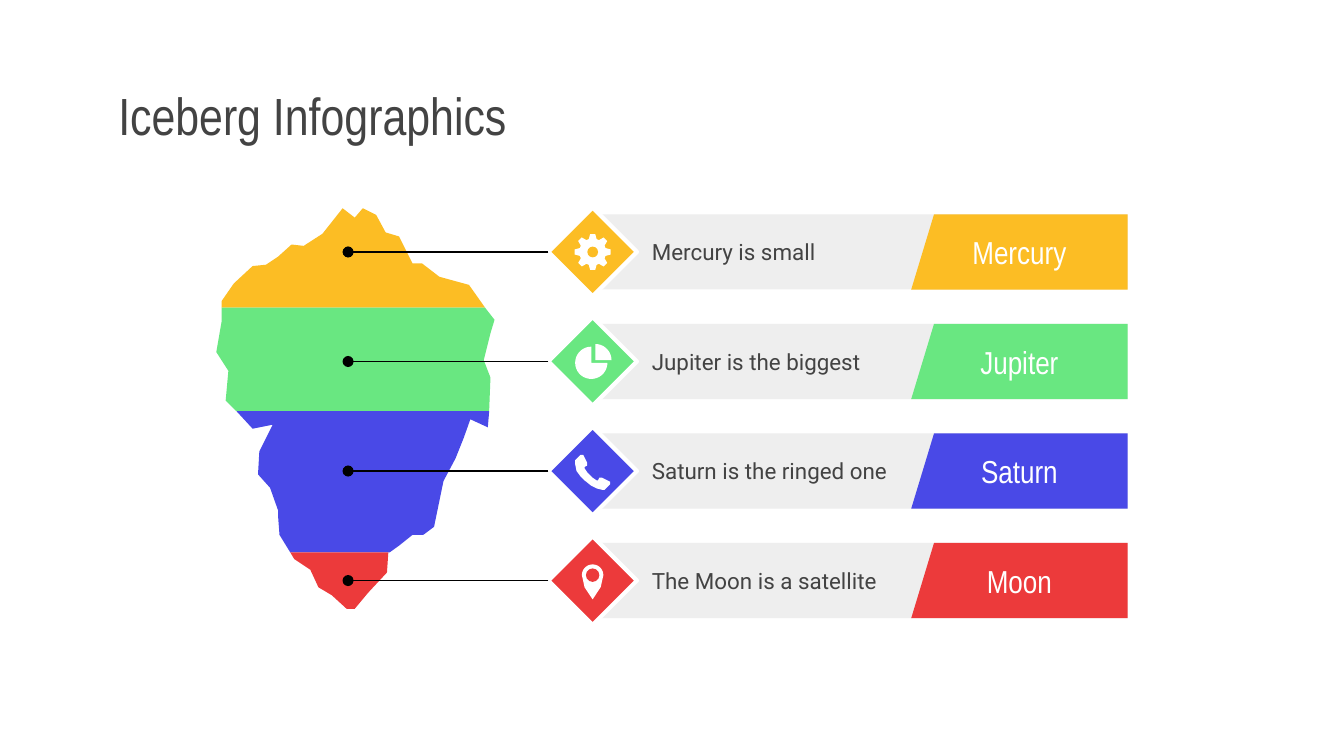
from math import cos, radians, sin

from lxml import etree
from pptx import Presentation
from pptx.dml.color import RGBColor
from pptx.enum.shapes import MSO_CONNECTOR, MSO_SHAPE
from pptx.enum.text import MSO_ANCHOR, MSO_AUTO_SIZE, PP_ALIGN
from pptx.oxml.ns import qn
from pptx.util import Inches, Pt

RECTANGLE, DIAMOND, OVAL = MSO_SHAPE.RECTANGLE, MSO_SHAPE.DIAMOND, MSO_SHAPE.OVAL
STRAIGHT = MSO_CONNECTOR.STRAIGHT
LEFT, CENTER, MIDDLE = PP_ALIGN.LEFT, PP_ALIGN.CENTER, MSO_ANCHOR.MIDDLE
NO_AUTOFIT = MSO_AUTO_SIZE.NONE

COLORS = {"yellow": "FCBD24", "green": "69E781", "blue": "4949E7", "red": "EC3A3B",
          "bar": "EEEEEE", "text": "434343", "white": "FFFFFF", "black": "000000"}

# Content: one row per iceberg layer, top to bottom
TITLE = "Iceberg Infographics"
ROWS = [("Mercury", "Mercury is small", "yellow", "gear"),
        ("Jupiter", "Jupiter is the biggest", "green", "pie"),
        ("Saturn", "Saturn is the ringed one", "blue", "phone"),
        ("Moon", "The Moon is a satellite", "red", "pin")]

# Iceberg outline by layer, in inches on the slide
LAYERS = [
    [(2.55, 1.55), (2.4, 1.74), (2.26, 1.83), (2.17, 1.82), (2.07, 1.91), (1.98, 1.97),
     (1.88, 1.98), (1.74, 2.11), (1.65, 2.24), (1.65, 2.29), (3.61, 2.29), (3.49, 2.12),
     (3.27, 2.06), (3.14, 1.96), (3.07, 1.96), (2.97, 1.76), (2.87, 1.73), (2.8, 1.6),
     (2.7, 1.55), (2.64, 1.62)],
    [(1.65, 2.29), (1.65, 2.39), (1.61, 2.62), (1.7, 2.76), (1.68, 2.98), (1.76, 3.06),
     (3.64, 3.06), (3.65, 2.81), (3.6, 2.68), (3.65, 2.48), (3.68, 2.38), (3.61, 2.29)],
    [(1.76, 3.06), (1.88, 3.19), (2.03, 3.16), (1.93, 3.36), (1.92, 3.53), (2.01, 3.63),
     (2.07, 3.8), (2.07, 3.85), (2.08, 3.98), (2.16, 4.11), (2.9, 4.11), (2.97, 4.06),
     (3.07, 3.98), (3.15, 3.98), (3.23, 3.92), (3.3, 3.58), (3.39, 3.41), (3.45, 3.26),
     (3.5, 3.12), (3.63, 3.18), (3.64, 3.06)],
    [(2.16, 4.11), (2.19, 4.16), (2.31, 4.24), (2.37, 4.37), (2.47, 4.43), (2.58, 4.53),
     (2.64, 4.53), (2.74, 4.41), (2.88, 4.26), (2.89, 4.11)]]

# Row geometry
PITCH = 1.63 / 2
LAST_Y = 4.32
FIRST_Y = LAST_Y - PITCH * (len(ROWS) - 1)
ICON_X, DOT_X, DIAMOND_SIZE = 4.41, 2.59, 0.66
BAR_LEFT, BAR_RIGHT, BAR_HEIGHT = 4.4, 8.39, 0.56
LABEL_LEFT, LABEL_SLANT = 6.78, 0.17


def arc(x, y, radius, start, end, step=10):
    return [(x + radius * cos(radians(a)), y + radius * sin(radians(a)))
            for a in range(start, end + 1, step)]


# Icon outlines, and round holes as (y, radius), around the diamond's centre
GEAR_TOOTH = [(-17, 0.1), (-8, 0.135), (8, 0.135), (17, 0.1)]
ICONS = {
    "gear": [[(radius * cos(radians(45 * tooth + turn)), radius * sin(radians(45 * tooth + turn)))
              for tooth in range(8) for turn, radius in GEAR_TOOTH]],
    "pie": [arc(-0.01, 0.01, 0.12, 0, 270) + [(-0.01, 0.01)],
            arc(0.02, -0.01, 0.12, -90, 0) + [(0.02, -0.01)]],
    "phone": [[(-0.08, -0.12), (-0.09, -0.12), (-0.13, -0.08), (-0.13, -0.05), (-0.12, 0),
               (-0.09, 0.04), (-0.06, 0.07), (-0.01, 0.11), (0.03, 0.13), (0.07, 0.14),
               (0.09, 0.14), (0.13, 0.1), (0.13, 0.08), (0.07, 0.05), (0.05, 0.05),
               (0.04, 0.07), (0.03, 0.07), (0, 0.05), (-0.04, 0.01), (-0.06, -0.02),
               (-0.06, -0.03), (-0.04, -0.04), (-0.04, -0.06), (-0.07, -0.12)]],
    "pin": [arc(0, -0.04, 0.08, 180, 360) + [(0.06, 0.05), (0, 0.14), (-0.06, 0.05)]]}
HOLES = {"gear": (0, 0.04), "pin": (-0.04, 0.05)}


def color(name):
    return RGBColor.from_string(COLORS[name])


def paint(shape, fill):
    shape.shadow.inherit = False
    shape.fill.solid()
    shape.fill.fore_color.rgb = color(fill)
    shape.line.fill.background()
    return shape


def add_preset(page, kind, left, top, width, height, fill):
    box = [Inches(value) for value in (left, top, width, height)]
    return paint(page.shapes.add_shape(kind, *box), fill)


def add_outline(page, points, fill, x=0, y=0):
    corners = [(Inches(x + dx), Inches(y + dy)) for dx, dy in points]
    builder = page.shapes.build_freeform(*corners[0])
    builder.add_line_segments(corners[1:], close=True)
    return paint(builder.convert_to_shape(), fill)


def write(shape, text, font, size, ink, align=LEFT, inset=0.1):
    frame = shape.text_frame
    frame_format = {"word_wrap": True, "auto_size": NO_AUTOFIT, "vertical_anchor": MIDDLE,
                    "margin_left": Inches(inset), "margin_right": Inches(0.1),
                    "margin_top": Inches(0.1), "margin_bottom": Inches(0.1)}
    for name, value in frame_format.items():
        setattr(frame, name, value)
    para = frame.paragraphs[0]
    para.alignment = align
    span = para.add_run()
    span.text = text
    for name, value in {"name": font, "size": Pt(size), "bold": False}.items():
        setattr(span.font, name, value)
    span.font.color.rgb = color(ink)


def add_pointer(page, diamond, y):
    pointer = page.shapes.add_connector(STRAIGHT, 0, 0, Inches(DOT_X), Inches(y))
    pointer.begin_connect(diamond, 1)
    pointer.line.color.rgb = color("black")
    pointer.line.width = Pt(0.75)
    etree.SubElement(pointer.line._get_or_add_ln(), qn("a:tailEnd"), type="oval")
    etree.SubElement(pointer._element.spPr, qn("a:effectLst"))


def add_row(page, y, name, description, hue, icon):
    top, bottom = y - BAR_HEIGHT / 2, y + BAR_HEIGHT / 2

    # Description bar and slanted name label
    bar = add_preset(page, RECTANGLE, BAR_LEFT, top, BAR_RIGHT - BAR_LEFT, BAR_HEIGHT, "bar")
    write(bar, description, "Roboto", 12, "text", inset=0.45)
    label = add_outline(page, [(LABEL_LEFT + LABEL_SLANT, top), (LABEL_LEFT, bottom),
                               (BAR_RIGHT, bottom), (BAR_RIGHT, top)], hue)
    write(label, name, "Arial Narrow", 17, "white", CENTER)

    # White-edged diamond with its pointer and icon
    half = DIAMOND_SIZE / 2
    diamond = add_preset(page, DIAMOND, ICON_X - half, y - half, DIAMOND_SIZE, DIAMOND_SIZE, hue)
    diamond.line.color.rgb = color("white")
    diamond.line.width = Pt(2.25)
    add_pointer(page, diamond, y)
    for points in ICONS[icon]:
        add_outline(page, points, "white", ICON_X, y)
    if icon in HOLES:
        dy, radius = HOLES[icon]
        add_preset(page, OVAL, ICON_X - radius, y + dy - radius, 2 * radius, 2 * radius, hue)


def main():
    # Widescreen page, 16 to 9
    deck = Presentation()
    deck.slide_width = Inches(10)
    deck.slide_height = deck.slide_width * 9 // 16
    page = deck.slides.add_slide(deck.slide_layouts[5])

    # Title
    title = page.shapes.title
    place = {"left": 0.78, "top": 0.59, "width": 8.45, "height": 0.53}
    for name, value in place.items():
        setattr(title, name, Inches(value))
    write(title, TITLE, "Arial Narrow", 28, "text")

    # Iceberg layers, then the rows that explain them
    for points, (_, _, hue, _) in zip(LAYERS, ROWS):
        add_outline(page, points, hue)
    for index, row in enumerate(ROWS):
        add_row(page, FIRST_Y + index * PITCH, *row)

    deck.save("out.pptx")


if __name__ == "__main__":
    main()
